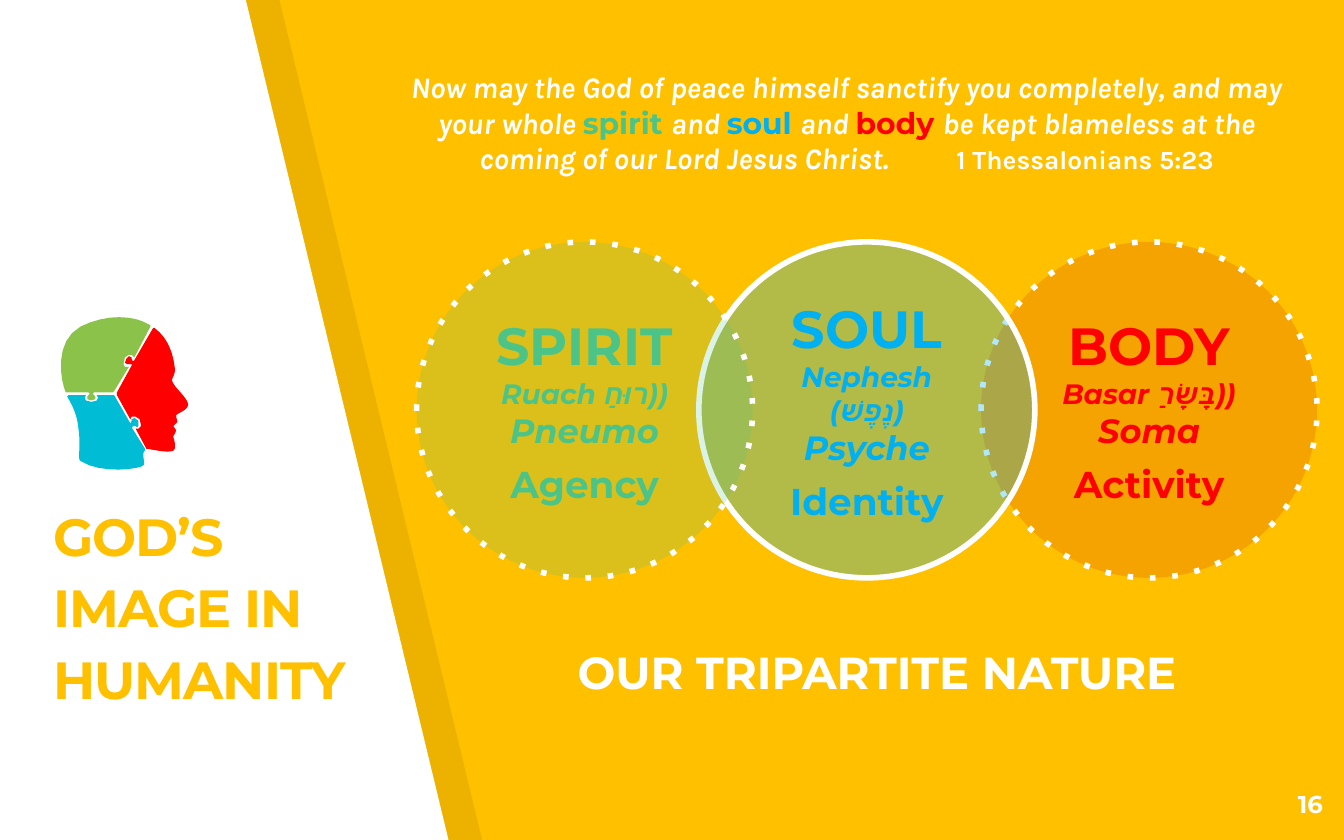
from lxml.etree import SubElement
from pptx import Presentation
from pptx.dml.color import RGBColor
from pptx.enum.shapes import MSO_SHAPE
from pptx.enum.text import MSO_ANCHOR, MSO_AUTO_SIZE, PP_ALIGN
from pptx.oxml.ns import qn
from pptx.util import Pt

COLORS = {
    "gold": "FFC000", "white": "FFFFFF", "black": "000000",
    "spirit": "4CC488", "soul": "00B0F0", "body": "FF0000",
    "body_fill": "C00000", "crown": "8BC34A", "neck": "00BCD4",
}
HEADING_FONT = "Montserrat"
VERSE_FONT = "Karla"
INSET = 7.2
CIRCLE_SIZE, CIRCLE_LEFT, CIRCLE_TOP, CIRCLE_STEP = 180, 223.2, 129.6, 151.2

# Left panel outline in points
PANEL = [(-1.44, -0.72), (-1.44, 451.44), (240.48, 450.72), (131.76, 0)]

# Puzzle head, in hundredths of an inch: pairs are corners, sixes are Bezier curves
HEAD_UNIT = 0.72
HEAD_PIECES = {
    "crown": [
        (98, 264), (96, 264), (93, 266), (92, 271), (93, 273), (96, 273), (85, 291),
        (84, 292), (70, 292), (69, 293), (70, 294), (71, 295), (71, 297), (68, 298),
        (65, 297), (65, 295), (66, 294), (67, 293), (66, 292), (49, 292),
        (45, 283, 40, 254, 60, 243), (80, 233, 100, 235, 110, 241),
        (112, 242), (112, 243), (100, 266),
    ],
    "body": [
        (103, 319), (105, 317), (104, 312), (101, 310), (98, 310), (97, 312), (87, 294),
        (87, 292), (98, 272), (98, 271), (96, 271), (95, 271), (93, 270), (94, 267),
        (96, 265), (98, 266), (98, 267), (99, 269), (100, 268), (114, 244), (115, 244),
        (126, 252, 129, 265, 130, 273), (131, 278, 128, 281, 128, 283),
        (129, 288, 140, 296, 140, 301), (140, 305, 133, 307, 131, 309),
        (132, 314), (129, 317), (131, 320), (131, 322, 129, 324, 129, 325),
        (129, 326, 131, 330, 130, 334), (129, 338, 116, 335, 110, 334),
        (109, 334), (101, 319),
    ],
    "neck": [
        (51, 294), (64, 294), (63, 296), (64, 298), (68, 299), (72, 298), (73, 296),
        (72, 294), (84, 294), (85, 294), (97, 315), (98, 313), (98, 312), (100, 311),
        (103, 313), (103, 316), (103, 318, 102, 318, 101, 317), (100, 317), (99, 317),
        (98, 318), (108, 334), (108, 335), (105, 337, 108, 343, 107, 346),
        (105, 349, 75, 353, 60, 343), (57, 341, 61, 334, 58, 316),
        (57, 308, 54, 302, 50, 295),
    ],
}


def rgb(name):
    return RGBColor.from_string(COLORS[name])


def set_fill(shape, color, opacity=100):
    shape.shadow.inherit = False
    shape.fill.solid()
    shape.fill.fore_color.rgb = rgb(color)
    if opacity < 100:
        color_element = shape._element.spPr.find(qn("a:solidFill"))[0]
        SubElement(color_element, qn("a:alpha"), val=str(opacity * 1000))


def flatten(outline, steps=8):
    """Replace each Bezier curve by points along it."""
    points = []
    for entry in outline:
        if len(entry) == 2:
            points.append(entry)
            continue
        controls = [points[-1], entry[:2], entry[2:4], entry[4:]]
        for step in range(1, steps + 1):
            t = step / steps
            weights = ((1 - t) ** 3, 3 * t * (1 - t) ** 2, 3 * t * t * (1 - t), t ** 3)
            points.append(tuple(sum(w * c[axis] for w, c in zip(weights, controls))
                                for axis in (0, 1)))
    return points


def add_outline(shapes, points, color, opacity=100):
    """Draw a closed, filled outline given in points."""
    corners = [(Pt(x), Pt(y)) for x, y in points]
    builder = shapes.build_freeform(*corners[0])
    builder.add_line_segments(corners[1:], close=True)
    shape = builder.convert_to_shape()
    set_fill(shape, color, opacity)
    shape.line.fill.background()


def add_head(slide):
    group = slide.shapes.add_group_shape()
    for color, outline in HEAD_PIECES.items():
        points = [(x * HEAD_UNIT, y * HEAD_UNIT) for x, y in flatten(outline)]
        add_outline(group.shapes, points, color)


def set_insets(text_frame):
    text_frame.margin_left = text_frame.margin_right = Pt(INSET)
    text_frame.margin_top = text_frame.margin_bottom = Pt(INSET)
    text_frame.word_wrap = True


def format_run(run, size, color, italic=False, font_name=HEADING_FONT):
    font = run.font
    font.name, font.size, font.bold, font.italic = font_name, Pt(size), True, italic
    font.color.rgb = rgb(color)


def add_label(slide, box, text, size, color, alignment, anchor=MSO_ANCHOR.BOTTOM):
    text_frame = slide.shapes.add_textbox(*map(Pt, box)).text_frame
    set_insets(text_frame)
    text_frame.vertical_anchor = anchor
    paragraph = text_frame.paragraphs[0]
    paragraph.text = text
    paragraph.alignment = alignment
    for run in paragraph.runs:
        format_run(run, size, color)
    return paragraph


def add_circle(slide, column, lines, color, fill, opacity, dotted=True):
    left = CIRCLE_LEFT + column * CIRCLE_STEP
    shape = slide.shapes.add_shape(MSO_SHAPE.OVAL, Pt(left), Pt(CIRCLE_TOP),
                                   Pt(CIRCLE_SIZE), Pt(CIRCLE_SIZE))
    set_fill(shape, fill, opacity)
    shape.line.color.rgb = rgb("white")
    shape.line.width = Pt(3)
    if dotted:
        SubElement(shape._element.spPr.find(qn("a:ln")), qn("a:prstDash"), val="dot")
    text_frame = shape.text_frame
    set_insets(text_frame)
    text_frame.vertical_anchor = MSO_ANCHOR.MIDDLE
    text_frame.text = "\n".join(lines)
    styles = [(28, False), (15, True), (18, True), (20, False)]
    for paragraph, (size, italic) in zip(text_frame.paragraphs, styles):
        paragraph.alignment = PP_ALIGN.CENTER
        format_run(paragraph.runs[0], size, color, italic)
    text_frame.paragraphs[2].space_after = Pt(6)


def add_verse(slide):
    text_frame = slide.shapes.add_textbox(Pt(208.8), Pt(33.12), Pt(489.6), Pt(65.5)).text_frame
    text_frame.word_wrap = True
    text_frame.auto_size = MSO_AUTO_SIZE.SHAPE_TO_FIT_TEXT
    paragraph = text_frame.paragraphs[0]
    paragraph.alignment = PP_ALIGN.CENTER
    verse = (16, "white", True, VERSE_FONT)
    parts = [
        ("Now may the God of peace himself sanctify you completely, and may your whole ", verse),
        ("spirit ", (16, "spirit")),
        ("and ", verse),
        ("soul ", (16, "soul")),
        ("and ", verse),
        ("body ", (16, "body")),
        ("be kept blameless at the coming of our Lord Jesus Christ.\t", verse),
        (" 1 Thessalonians 5:23", (14, "white", False, VERSE_FONT)),
    ]
    for text, style in parts:
        run = paragraph.add_run()
        run.text = text
        format_run(run, *style)


def main():
    presentation = Presentation()
    presentation.slide_width, presentation.slide_height = Pt(720), Pt(450)
    slide = presentation.slides.add_slide(presentation.slide_layouts[6])
    slide.background.fill.solid()
    slide.background.fill.fore_color.rgb = rgb("gold")

    add_outline(slide.shapes, [(x + 18, y) for x, y in PANEL], "black", 7)
    add_outline(slide.shapes, PANEL, "white")

    title = add_label(slide, (21.6, 333.36, 180, 54), "GOD’S\vIMAGE IN\vHUMANITY",
                      28, "gold", PP_ALIGN.LEFT)
    title.line_spacing = 1.14
    for run in title.runs:
        run.font._element.set("spc", "-50")

    add_circle(slide, 2, ["BODY", "Basar בָּשָׂרַ))", "Soma", "Activity"], "body", "body_fill", 15)
    add_circle(slide, 1, ["SOUL", "Nephesh (נֶפֶשׁ)", "Psyche", "Identity"], "soul", "soul", 30,
               dotted=False)
    add_label(slide, (672.48, 415.44, 43.2, 34.56), "16", 13, "white", PP_ALIGN.RIGHT,
              MSO_ANCHOR.TOP)
    add_label(slide, (298.8, 339.12, 342, 42.48), "OUR TRIPARTITE NATURE", 24, "white",
              PP_ALIGN.CENTER)
    add_head(slide)
    add_verse(slide)
    add_circle(slide, 0, ["SPIRIT", "Ruach רוּחַ))", "Pneumo", "Agency"], "spirit", "spirit", 20)
    presentation.save("out.pptx")


if __name__ == "__main__":
    main()
